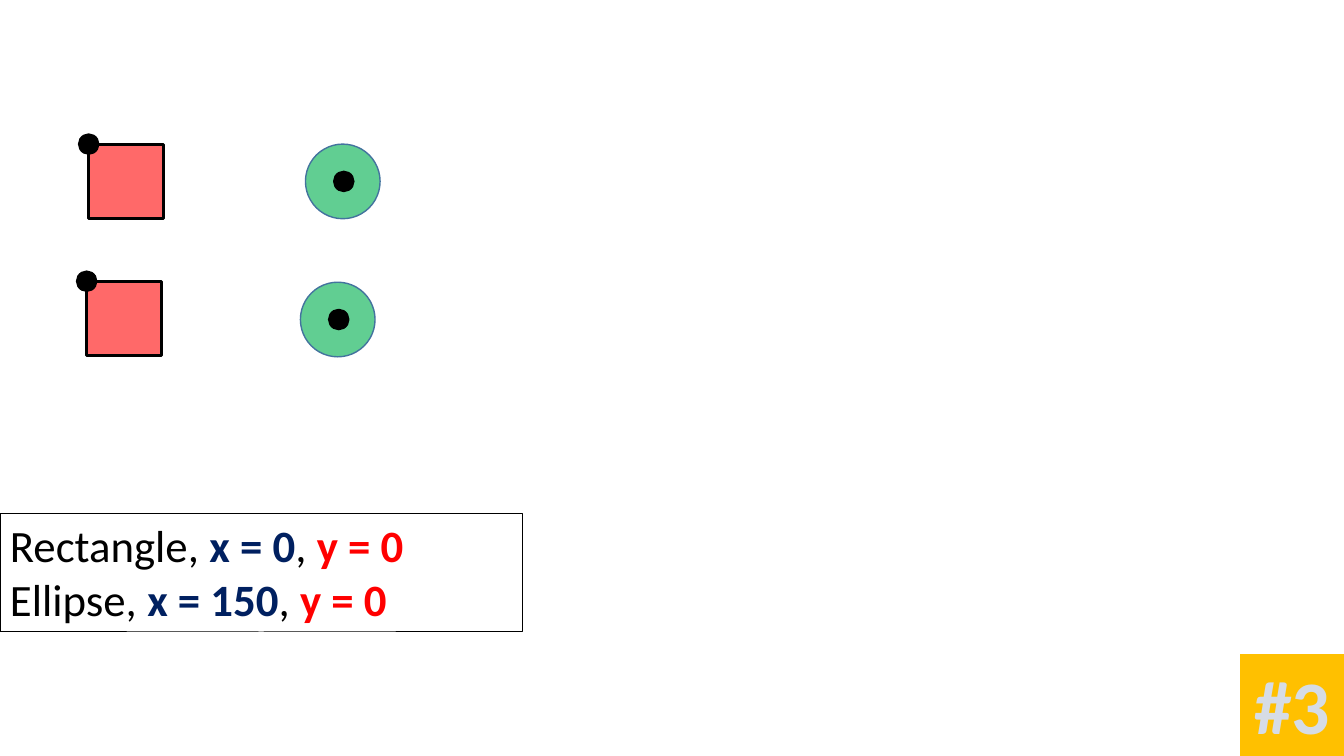
from dataclasses import dataclass

from lxml.etree import SubElement
from pptx import Presentation
from pptx.dml.color import RGBColor
from pptx.enum.dml import MSO_PATTERN
from pptx.enum.shapes import MSO_SHAPE as Preset
from pptx.enum.text import MSO_AUTO_SIZE as AutoSize, PP_ALIGN as Align
from pptx.oxml import parse_xml
from pptx.oxml.ns import nsdecls, qn
from pptx.shapes.autoshape import Shape
from pptx.slide import Slide
from pptx.text.text import _Run as Run
from pptx.util import Inches, Pt


@dataclass(frozen=True)
class Theme:
    font: str = "Calibri"
    label_size: float = 32
    badge_size: float = 54
    black: str = "000000"
    red: str = "FF0000"
    navy: str = "002060"
    green: str = "00B050"
    circle_line: str = "43739E"
    badge_fill: str = "FFC000"
    badge_stripe: str = "44546A"
    badge_text: str = "D6DCE5"
    badge_outline: str = "333F50"


@dataclass(frozen=True)
class Figure:
    preset: Preset
    fill: str
    opacity: int
    line: str
    line_width: float
    dot_dx: float
    dot_dy: float


@dataclass(frozen=True)
class Placement:
    figure: Figure
    left: float
    top: float


@dataclass(frozen=True)
class Label:
    name: str
    x: int
    y: int


THEME = Theme()
FIGURE_SIZE = 0.74
DOT_SIZE = 0.2
SQUARE = Figure(Preset.RECTANGLE, THEME.red, 59, THEME.black, 2.25, -0.1, -0.1)
CIRCLE = Figure(Preset.OVAL, THEME.green, 62, THEME.circle_line, 1, 0.28, 0.27)
DOT = Figure(Preset.OVAL, THEME.black, 100, THEME.black, 1, 0, 0)
PLACEMENTS = (
    Placement(SQUARE, 0.86, 2.79),
    Placement(CIRCLE, 2.98, 2.8),
    Placement(SQUARE, 0.88, 1.43),
    Placement(CIRCLE, 3.03, 1.43),
)
LABELS = (Label("Rectangle", 0, 0), Label("Ellipse", 150, 0))


def rgb(color: str) -> RGBColor:
    return RGBColor.from_string(color)


def draw_figure(shapes, figure: Figure, left: float, top: float, size: float) -> None:
    shape = shapes.add_shape(
        figure.preset, Inches(left), Inches(top), Inches(size), Inches(size)
    )
    shape.shadow.inherit = False
    shape.fill.solid()
    shape.fill.fore_color.rgb = rgb(figure.fill)
    if figure.opacity < 100:
        color = shape.fill._xPr.find(qn("a:solidFill")).find(qn("a:srgbClr"))
        SubElement(color, qn("a:alpha")).set("val", str(figure.opacity * 1000))
    shape.line.color.rgb = rgb(figure.line)
    shape.line.width = Pt(figure.line_width)


def draw_marked_figure(slide: Slide, placement: Placement) -> None:
    shapes = slide.shapes.add_group_shape().shapes
    figure, left, top = placement.figure, placement.left, placement.top
    draw_figure(shapes, figure, left, top, FIGURE_SIZE)
    draw_figure(shapes, DOT, left + figure.dot_dx, top + figure.dot_dy, DOT_SIZE)


def add_box(
    slide: Slide, left: float, top: float, width: float, height: float, wrap: bool
) -> Shape:
    box = slide.shapes.add_textbox(
        Inches(left), Inches(top), Inches(width), Inches(height)
    )
    box.text_frame.word_wrap = wrap
    box.text_frame.auto_size = AutoSize.SHAPE_TO_FIT_TEXT
    return box


def add_run(paragraph, text: str, size: float, bold: bool) -> Run:
    run = paragraph.add_run()
    run.text = text
    run.font.name = THEME.font
    run.font.size = Pt(size)
    run.font.bold = bold
    return run


def draw_labels(slide: Slide) -> None:
    box = add_box(slide, 0, 5.09, 5.18, 1.18, True)
    box.line.color.rgb = rgb(THEME.black)
    box.line.width = Pt(0.75)
    frame = box.text_frame
    for index, label in enumerate(LABELS):
        paragraph = frame.add_paragraph() if index else frame.paragraphs[0]
        for text, color, bold in (
            (f"{label.name}, ", THEME.black, False),
            (f"x = {label.x}", THEME.navy, True),
            (", ", THEME.black, False),
            (f"y = {label.y}", THEME.red, True),
        ):
            run = add_run(paragraph, text, THEME.label_size, bold)
            run.font.color.rgb = rgb(color)


def draw_badge(slide: Slide) -> None:
    box = add_box(slide, 12.3, 6.49, 1.03, 1.01, False)
    box.fill.solid()
    box.fill.fore_color.rgb = rgb(THEME.badge_fill)
    paragraph = box.text_frame.paragraphs[0]
    paragraph.alignment = Align.CENTER
    run = add_run(paragraph, "#3", THEME.badge_size, True)
    fill = run.font.fill
    fill.patterned()
    fill.pattern = MSO_PATTERN.DARK_UPWARD_DIAGONAL
    fill.fore_color.rgb = rgb(THEME.badge_stripe)
    fill.back_color.rgb = rgb(THEME.badge_text)
    outline = parse_xml(
        f'<a:ln {nsdecls("a")} w="{Pt(1)}"><a:solidFill>'
        f'<a:srgbClr val="{THEME.badge_outline}"/></a:solidFill></a:ln>'
    )
    run.font._element.insert(0, outline)


def main() -> None:
    presentation = Presentation()
    presentation.slide_width = Inches(13.33)
    presentation.slide_height = Inches(7.5)
    slide = presentation.slides.add_slide(presentation.slide_layouts[6])
    draw_labels(slide)
    for placement in PLACEMENTS:
        draw_marked_figure(slide, placement)
    draw_badge(slide)
    presentation.save("out.pptx")


if __name__ == "__main__":
    main()
